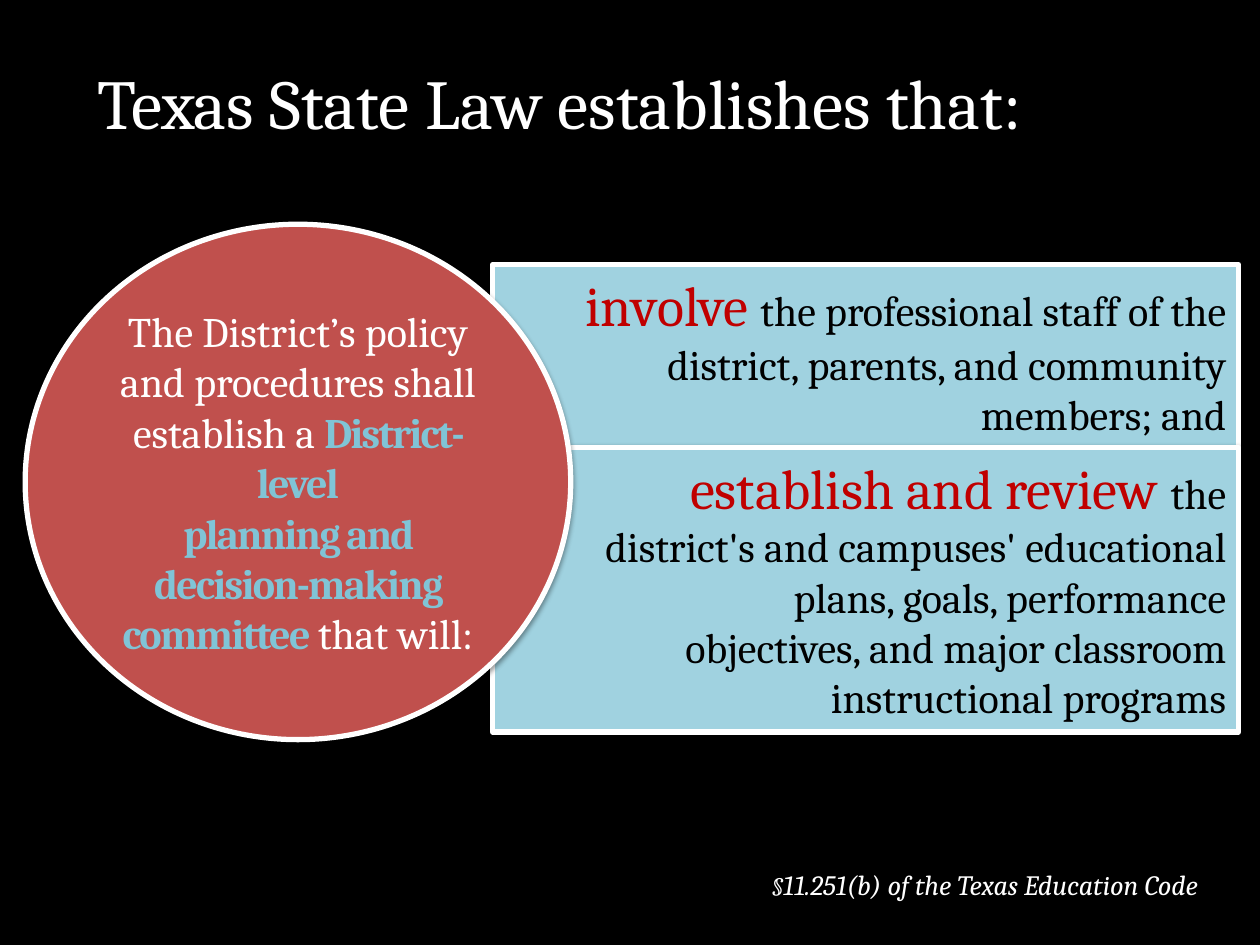
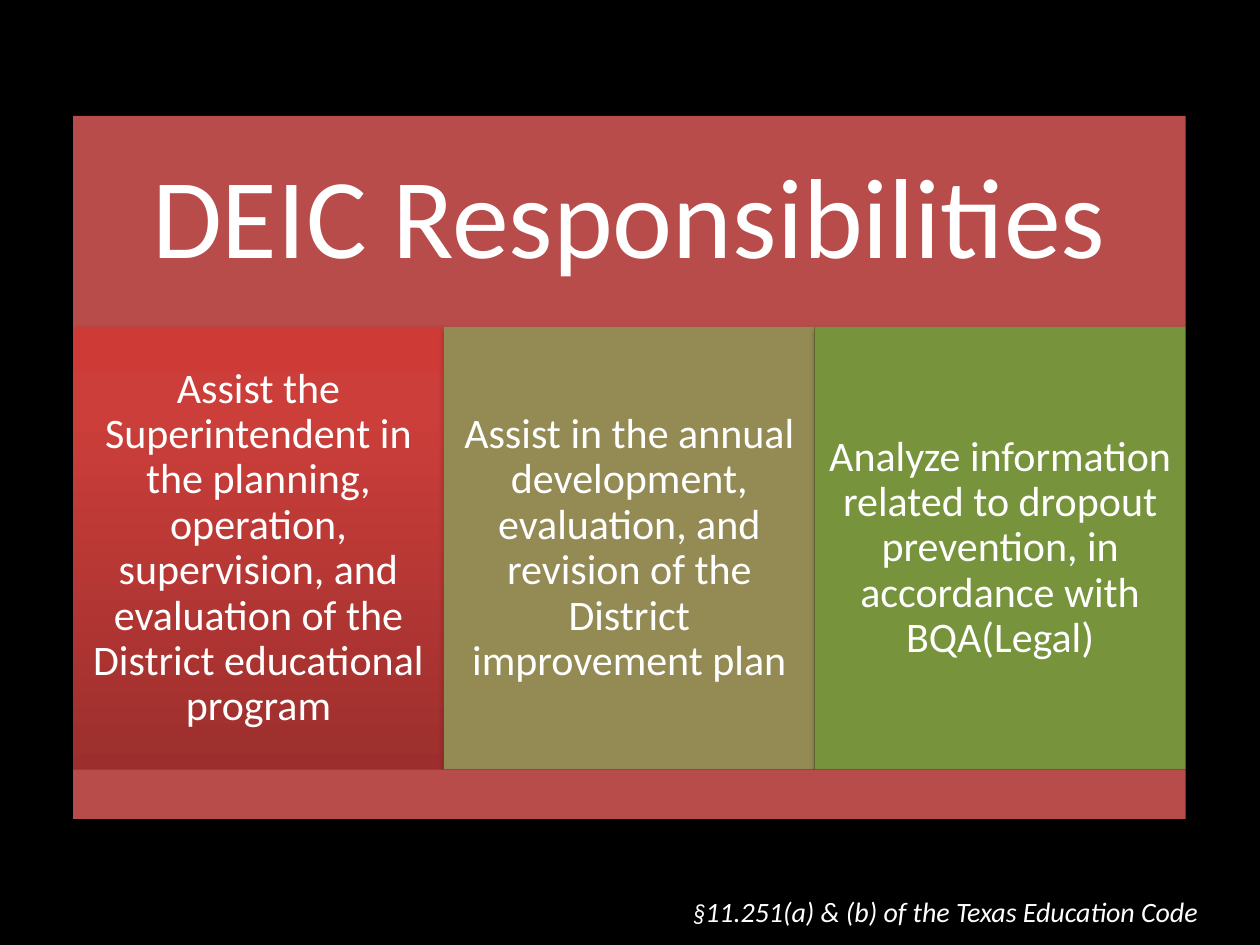
from copy import deepcopy
from dataclasses import dataclass

from lxml import etree
from pptx import Presentation
from pptx.dml.color import RGBColor
from pptx.enum.shapes import MSO_SHAPE
from pptx.enum.text import MSO_ANCHOR, MSO_AUTO_SIZE, PP_ALIGN
from pptx.oxml.ns import qn
from pptx.util import Inches, Pt

RECTANGLE, OVAL = MSO_SHAPE.RECTANGLE, MSO_SHAPE.OVAL
LEFT, CENTER, RIGHT = PP_ALIGN.LEFT, PP_ALIGN.CENTER, PP_ALIGN.RIGHT
TOP, MIDDLE, BOTTOM = MSO_ANCHOR.TOP, MSO_ANCHOR.MIDDLE, MSO_ANCHOR.BOTTOM
NO_AUTOFIT = MSO_AUTO_SIZE.NONE
TITLE_ONLY = 5


@dataclass(frozen=True)
class Theme:
    serif: str = "Cambria"
    sans: str = "Calibri"
    narrow: str = "Arial Narrow"
    background: str = "000000"
    light: str = "FFFFFF"
    dark: str = "000000"
    duty_fill: str = "A0D2E0"
    duty_accent: str = "C00000"
    policy_fill: str = "C0504D"
    policy_accent: str = "80C4D6"
    band: str = "B74C4A"
    red_gradient: tuple = ((0, "9C2F2D"), (0.8, "CB3E3A"), (1, "CE3B37"))
    olive: str = "948A54"
    green: str = "77933C"
    banner_size: int = 65
    title_size: int = 40
    accent_size: int = 32
    body_size: int = 24
    source_size: int = 16
    section_sign_size: int = 14
    outline: int = 3


THEME = Theme()


def rgb(value):
    return RGBColor.from_string(value)


def style_font(font, name=None, size=None, color=None, bold=None, italic=None):
    if name:
        font.name = name
    if size:
        font.size = Pt(size)
    if color:
        font.color.rgb = rgb(color)
    if bold is not None:
        font.bold = bold
    if italic is not None:
        font.italic = italic


def write(shape, paragraphs, align, anchor, inset=None, line_spacing=None, **base):
    """Fill a shape with paragraphs, each a list of (text, run overrides)."""
    frame = shape.text_frame
    frame.word_wrap = True
    frame.auto_size = NO_AUTOFIT
    frame.vertical_anchor = anchor
    if inset is not None:
        frame.margin_left = frame.margin_right = Inches(inset)
        frame.margin_top = frame.margin_bottom = Inches(inset)
    for index, parts in enumerate(paragraphs):
        paragraph = frame.add_paragraph() if index else frame.paragraphs[0]
        paragraph.alignment = align
        if line_spacing:
            paragraph.line_spacing = line_spacing
        style_font(paragraph.font, **base)
        for text, overrides in parts:
            run = paragraph.add_run()
            run.text = text
            style_font(run.font, **overrides)


def add_shadow(shape, opacity, blur, distance):
    """Cast a soft black shadow straight down; lengths in points."""
    effects = etree.SubElement(shape.element.spPr, qn("a:effectLst"))
    shadow = etree.SubElement(
        effects, qn("a:outerShdw"), blurRad=str(Pt(blur)), dist=str(Pt(distance)),
        dir="5400000", rotWithShape="0")
    color = etree.SubElement(shadow, qn("a:srgbClr"), val="000000")
    etree.SubElement(color, qn("a:alpha"), val=str(opacity * 1000))


def place(shape, box):
    shape.left, shape.top, shape.width, shape.height = map(Inches, box)


def fill_gradient(shape, stops):
    shape.fill.gradient()
    shape.fill.gradient_angle = 90
    stop_list = shape.element.spPr.find(qn("a:gradFill")).find(qn("a:gsLst"))
    stop_list.append(deepcopy(stop_list[-1]))
    for stop, (position, color) in zip(shape.fill.gradient_stops, stops):
        stop.position = position
        stop.color.rgb = rgb(color)


def add_outlined(slide, kind, box, fill):
    shape = slide.shapes.add_shape(kind, *map(Inches, box))
    shape.fill.solid()
    shape.fill.fore_color.rgb = rgb(fill)
    shape.line.color.rgb = rgb(THEME.light)
    shape.line.width = Pt(THEME.outline)
    add_shadow(shape, 38, 3.1, 1.6)
    return shape


def add_block(slide, box, fill):
    """Borderless block; fill is a colour or a series of gradient stops."""
    block = slide.shapes.add_shape(RECTANGLE, *map(Inches, box))
    if isinstance(fill, str):
        block.fill.solid()
        block.fill.fore_color.rgb = rgb(fill)
    else:
        fill_gradient(block, fill)
    block.line.fill.background()
    add_shadow(block, 35, 3.1, 1.8)
    return block


def add_source(slide, top, citation, font, sign_font):
    source = slide.shapes.add_textbox(*map(Inches, (2.08, top, 7.43, 0.4)))
    sign = {"name": sign_font, "size": THEME.section_sign_size}
    write(source, [[("§", sign), (citation, {})]], RIGHT, BOTTOM, inset=0,
          name=font, size=THEME.source_size, color=THEME.light, italic=True)


# Slide 1: the committee and its two duties
def add_duties(slide, box):
    left, top, width, height = box
    first_height = 1.45
    accent = {"size": THEME.accent_size, "color": THEME.duty_accent}
    involve = [
        [("involve ", accent),
         ("the professional staff of the district, parents, and community "
          "members; and", {})],
    ]
    review = [
        [("establish and review ", accent), ("the", {})],
        [("district's and campuses' educational plans, goals, performance", {})],
        [("objectives, and major classroom instructional programs", {})],
    ]
    rows = ((top, first_height, involve),
            (top + first_height, height - first_height, review))
    for row_top, row_height, duty_text in rows:
        duty = add_outlined(slide, RECTANGLE, (left, row_top, width, row_height),
                            THEME.duty_fill)
        write(duty, duty_text, RIGHT, TOP, name=THEME.serif,
              size=THEME.body_size, color=THEME.dark)


def add_policy(slide, box):
    policy = add_outlined(slide, OVAL, box, THEME.policy_fill)
    committee = {"color": THEME.policy_accent, "bold": True}
    write(policy, [
        [("The District’s policy and procedures shall establish a ", {}),
         ("District-level", committee)],
        [("planning and decision-making committee ", committee),
         ("that will:", {})],
    ], CENTER, MIDDLE, name=THEME.serif, size=THEME.body_size, color=THEME.light)
    # Tighten the committee's name
    for paragraph in policy.text_frame.paragraphs:
        for run in paragraph.runs:
            if run.font.bold:
                run.font._element.set("spc", "-100")


def build_law_slide(slide):
    title = slide.shapes.title
    place(title, (0.67, 0.42, 7.95, 0.77))
    write(title, [[("Texas State Law establishes that:", {})]], LEFT, TOP,
          name=THEME.serif, size=THEME.title_size, color=THEME.light)
    add_duties(slide, (3.91, 2.1, 5.92, 3.71))
    add_policy(slide, (0.2, 1.78, 4.33, 4.09))
    add_source(slide, 6.75, "11.251(b) of the Texas Education Code",
               THEME.serif, THEME.serif)


# Slide 2: banner, three responsibilities, closing band
def add_responsibilities(slide, box):
    left, top, width, height = box
    banner_height, column_height, band_height = (
        height * share for share in (0.3, 0.63, 0.07))

    banner = slide.shapes.title
    place(banner, (left, top, width, banner_height))
    banner.fill.solid()
    banner.fill.fore_color.rgb = rgb(THEME.band)
    add_shadow(banner, 35, 3.1, 1.8)
    write(banner, [[("DEIC Responsibilities", {})]], CENTER, MIDDLE, inset=0.27,
          line_spacing=0.9, name=THEME.sans, size=THEME.banner_size,
          color=THEME.light)

    responsibilities = (
        ("Assist the Superintendent in the planning, operation, supervision, "
         "and evaluation of the District educational program", THEME.red_gradient),
        ("Assist in the annual development, evaluation, and revision of the "
         "District improvement plan", THEME.olive),
        ("Analyze information related to dropout prevention, in accordance "
         "with BQA(Legal)", THEME.green),
    )
    column_width = width / len(responsibilities)
    column_top = top + banner_height
    for index, (text, fill) in enumerate(responsibilities):
        column = add_block(slide, (left + index * column_width, column_top,
                                   column_width, column_height), fill)
        write(column, [[(text, {})]], CENTER, MIDDLE, inset=0.1, line_spacing=0.9,
              name=THEME.sans, size=THEME.body_size, color=THEME.light)

    add_block(slide, (left, column_top + column_height, width, band_height),
              THEME.band)


def build_responsibilities_slide(slide):
    add_responsibilities(slide, (0.58, 0.92, 8.83, 5.58))
    add_source(slide, 6.97, "11.251(a) & (b) of the Texas Education Code",
               THEME.sans, THEME.narrow)


def main():
    deck = Presentation()
    deck.slide_width, deck.slide_height = Inches(10), Inches(7.5)
    backdrop = deck.slide_master.background.fill
    backdrop.solid()
    backdrop.fore_color.rgb = rgb(THEME.background)
    for build in (build_law_slide, build_responsibilities_slide):
        build(deck.slides.add_slide(deck.slide_layouts[TITLE_ONLY]))
    deck.save("out.pptx")


if __name__ == "__main__":
    main()
